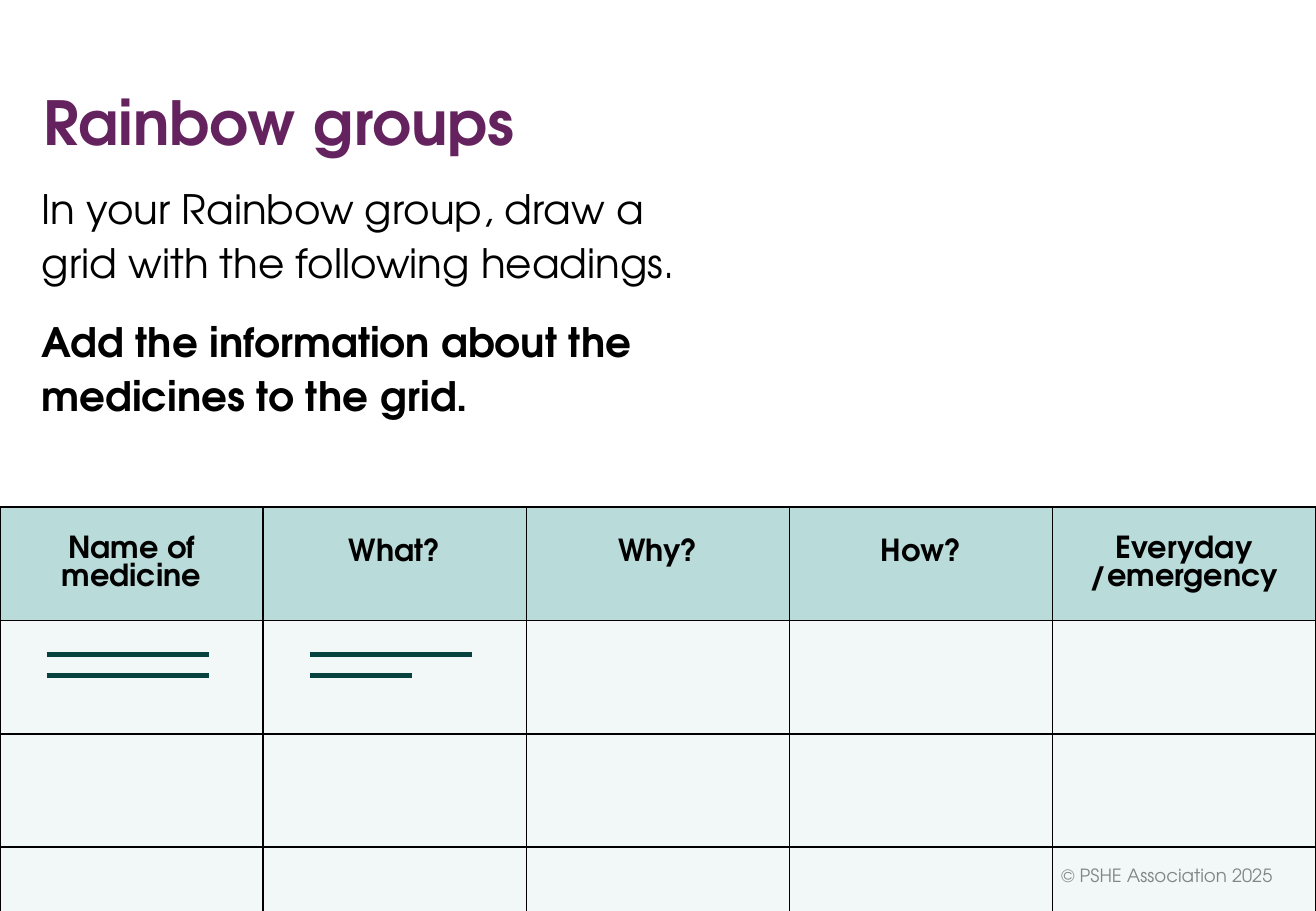
from lxml import etree
from pptx import Presentation
from pptx.dml.color import RGBColor
from pptx.enum.shapes import MSO_CONNECTOR
from pptx.enum.text import MSO_ANCHOR, MSO_AUTO_SIZE, PP_ALIGN
from pptx.oxml.ns import qn
from pptx.util import Emu, Pt

PX = 7620  # 120 px to the inch
WIDE, HIGH = 1300, 900
FONT = "TeX Gyre Adventor"
PLUM = RGBColor(0x64, 0x23, 0x5E)
BLACK = RGBColor(0, 0, 0)
GREY = RGBColor(0x80, 0x80, 0x80)
TEAL = RGBColor(0x88, 0xC2, 0xBF)
DARK = RGBColor(0x08, 0x42, 0x3F)
LEFT, MID, RIGHT = PP_ALIGN.LEFT, PP_ALIGN.CENTER, PP_ALIGN.RIGHT
BOTTOM, MIDDLE, TOP = MSO_ANCHOR.BOTTOM, MSO_ANCHOR.MIDDLE, MSO_ANCHOR.TOP
FIXED = MSO_AUTO_SIZE.NONE
STRAIGHT = MSO_CONNECTOR.STRAIGHT

HEADS = ["Name of medicine", "What?", "Why?", "How?", "Everyday\v/emergency"]
ROWS = 4


def px(*nums):
    return [Emu(n * PX) for n in nums]


def style(para, size, color, bold=False, align=LEFT, lead=None):
    para.alignment = align
    if lead:
        para.line_spacing = Pt(lead)
    font = para.font
    font.name, font.size, font.bold = FONT, Pt(size), bold
    font.color.rgb = color


def place(shape, box, anchor):
    shape.left, shape.top, shape.width, shape.height = px(*box)
    frame = shape.text_frame
    frame.word_wrap = True
    frame.auto_size = FIXED
    frame.vertical_anchor = anchor
    return frame


def add_title(slide, box):
    frame = place(slide.shapes.title, box, BOTTOM)
    frame.text = "Rainbow groups"
    style(frame.paragraphs[0], 36, PLUM, True, lead=43)


def add_task(slide, box):
    frame = place(slide.placeholders[1], box, TOP)
    frame.text = ("In your Rainbow group, draw a grid with the following headings.\n"
                  "Add the information about the medicines to the grid.")
    for i, para in enumerate(frame.paragraphs):
        props = para._p.get_or_add_pPr()
        props.set("marL", "0")
        props.set("indent", "0")
        etree.SubElement(props, qn("a:buNone"))
        para.space_before = Pt(15 * i)
        style(para, 24, BLACK, i == 1, lead=32)


def add_credit(slide, box):
    frame = place(slide.shapes.add_textbox(*px(*box)), box, MIDDLE)
    frame.text = "© PSHE Association 2025"
    style(frame.paragraphs[0], 10.8, GREY, align=RIGHT)


def paint(cell, alpha):
    """Give a cell a see-through teal fill and thin black borders."""
    cell.fill.solid()
    cell.fill.fore_color.rgb = TEAL
    props = cell._tc.get_or_add_tcPr()
    tint = props.find(".//" + qn("a:srgbClr"))
    etree.SubElement(tint, qn("a:alpha"), val=str(alpha * 1000))
    for i, side in enumerate(("lnL", "lnR", "lnT", "lnB")):
        line = etree.Element(qn("a:" + side), w=str(Pt(1)))
        fill = etree.SubElement(line, qn("a:solidFill"))
        etree.SubElement(fill, qn("a:srgbClr"), val=str(BLACK))
        props.insert(i, line)


def add_grid(slide, box):
    table = slide.shapes.add_table(ROWS, len(HEADS), *px(*box)).table
    table.horz_banding = False
    for r in range(ROWS):
        for c, head in enumerate(HEADS):
            cell = table.cell(r, c)
            paint(cell, 10 if r else 59)
            if r:
                continue
            cell.text = head
            cell.vertical_anchor = MIDDLE
            if " " not in head and "\v" not in head:
                cell.margin_bottom = Emu(28 * PX)
            style(cell.text_frame.paragraphs[0], 18, BLACK, True, MID, 16.6)


def add_notes(slide, box, spans):
    """Draw lines of the given lengths that stand for handwriting."""
    x, y, gap = box
    for i, span in enumerate(spans):
        level = y + i * gap
        line = slide.shapes.add_connector(STRAIGHT, *px(x, level, x + span, level))
        line.line.color.rgb = DARK
        line.line.width = Pt(3)
        etree.SubElement(line._element.spPr, qn("a:effectLst"))


def main():
    deck = Presentation()
    deck.slide_width, deck.slide_height = px(WIDE, HIGH)
    slide = deck.slides.add_slide(deck.slide_layouts[1])
    top, col, row = 501, WIDE // len(HEADS), 112
    add_title(slide, (31, 71, 1103, 91))
    add_credit(slide, (976, 841, 293, 48))
    add_grid(slide, (0, top, WIDE, row * ROWS))
    add_task(slide, (29, 170, 695, 298))
    for c, spans in enumerate([(160, 160), (160, 101)]):
        add_notes(slide, (c * col + 46, top + row + 34, 20), spans)
    deck.save("out.pptx")


if __name__ == "__main__":
    main()
